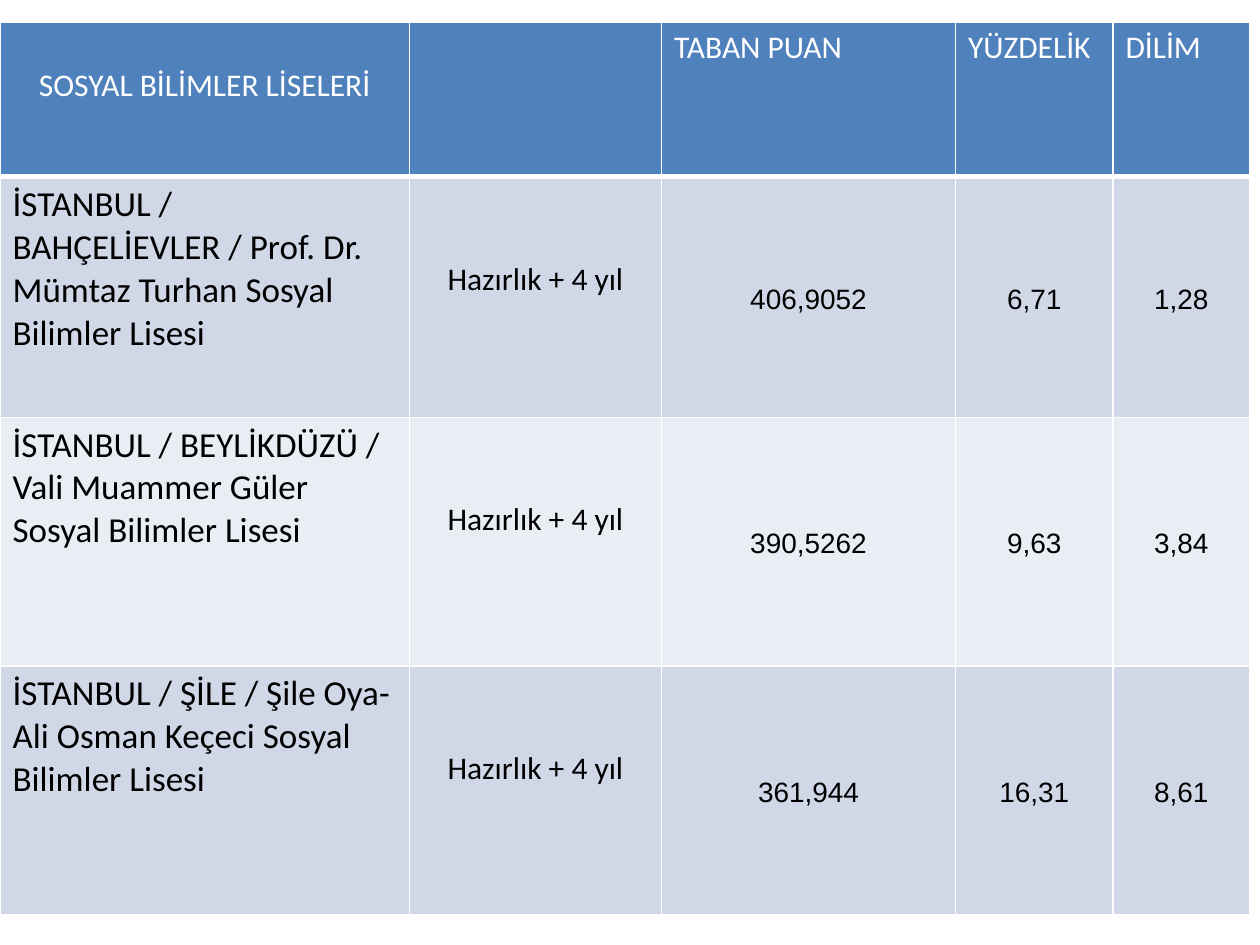
from lxml.etree import SubElement
from pptx import Presentation
from pptx.dml.color import RGBColor
from pptx.enum.text import MSO_ANCHOR, PP_ALIGN
from pptx.oxml.ns import qn
from pptx.util import Pt

HUES = {"head": "4F81BD", "odd": "D0D8E8", "even": "E9EDF4",
        "light": "FFFFFF", "dark": "000000"}
COLS = [234, 144, 168, 90, 78]
ROWS = [88.5, 137.5, 142, 142]
HEAD = ["SOSYAL BİLİMLER LİSELERİ", "", "TABAN PUAN", "YÜZDELİK", "DİLİM"]
TERM = "Hazırlık + 4 yıl"
DATA = [
    ["İSTANBUL / BAHÇELİEVLER / Prof. Dr. Mümtaz Turhan Sosyal Bilimler Lisesi",
     TERM, "406,9052", "6,71", "1,28"],
    ["İSTANBUL / BEYLİKDÜZÜ / Vali Muammer Güler Sosyal Bilimler Lisesi",
     TERM, "390,5262", "9,63", "3,84"],
    ["İSTANBUL / ŞİLE / Şile Oya-Ali Osman Keçeci Sosyal Bilimler Lisesi",
     TERM, "361,944", "16,31", "8,61"],
]
LINE = 22
PAD = 3.6


def rgb(name):
    return RGBColor.from_string(HUES[name])


def write(cell, text, size=18, font="Calibri", hue="dark", align=PP_ALIGN.LEFT,
          skip=0, space=None, after=None):
    if not text:
        return
    cell.margin_top = Pt(PAD + skip * LINE)
    para = cell.text_frame.paragraphs[0]
    para.alignment = align
    if space:
        para.line_spacing = space
    if after:
        para.space_after = Pt(after)
    run = para.add_run()
    run.text = text
    run.font.size = Pt(size)
    run.font.name = font
    run.font.bold = False
    run.font.color.rgb = rgb(hue)


def edge(cell, base=1):
    props = cell._tc.get_or_add_tcPr()
    for side, width in zip("LRTB", (1, 1, 1, base)):
        line = SubElement(props, qn(f"a:ln{side}"), w=str(Pt(width)))
        fill = SubElement(line, qn("a:solidFill"))
        SubElement(fill, qn("a:srgbClr"), val=HUES["light"])


def paint(cell, hue):
    cell.fill.solid()
    cell.fill.fore_color.rgb = rgb(hue)


def score(cell, text):
    write(cell, text, size=16, font="Arial", align=PP_ALIGN.CENTER,
          space=1.15, after=7.5)
    cell.vertical_anchor = MSO_ANCHOR.MIDDLE
    cell.margin_left = cell.margin_right = 0
    cell.margin_top = cell.margin_bottom = 0


def header(table):
    for col, text in enumerate(HEAD):
        cell = table.cell(0, col)
        edge(cell, base=3)
        paint(cell, "head")
        first = col == 0
        write(cell, text, hue="light", skip=int(first),
              align=PP_ALIGN.CENTER if first else PP_ALIGN.LEFT)


def body(table):
    for row, (school, term, *marks) in enumerate(DATA, 1):
        cells = [table.cell(row, col) for col in range(len(COLS))]
        for cell in cells:
            edge(cell)
            paint(cell, "odd" if row % 2 else "even")
        write(cells[0], school, size=20)
        write(cells[1], term, align=PP_ALIGN.CENTER, skip=2)
        for cell, mark in zip(cells[2:], marks):
            score(cell, mark)


def grid(slide):
    frame = slide.shapes.add_table(len(ROWS), len(COLS), Pt(0), Pt(12.5),
                                   Pt(sum(COLS)), Pt(sum(ROWS)))
    table = frame.table
    for col, width in zip(table.columns, COLS):
        col.width = Pt(width)
    for row, height in zip(table.rows, ROWS):
        row.height = Pt(height)
    return table


def main():
    deck = Presentation()
    deck.slide_width, deck.slide_height = Pt(720), Pt(540)
    slide = deck.slides.add_slide(deck.slide_layouts[6])
    table = grid(slide)
    header(table)
    body(table)
    deck.save("out.pptx")


if __name__ == "__main__":
    main()
